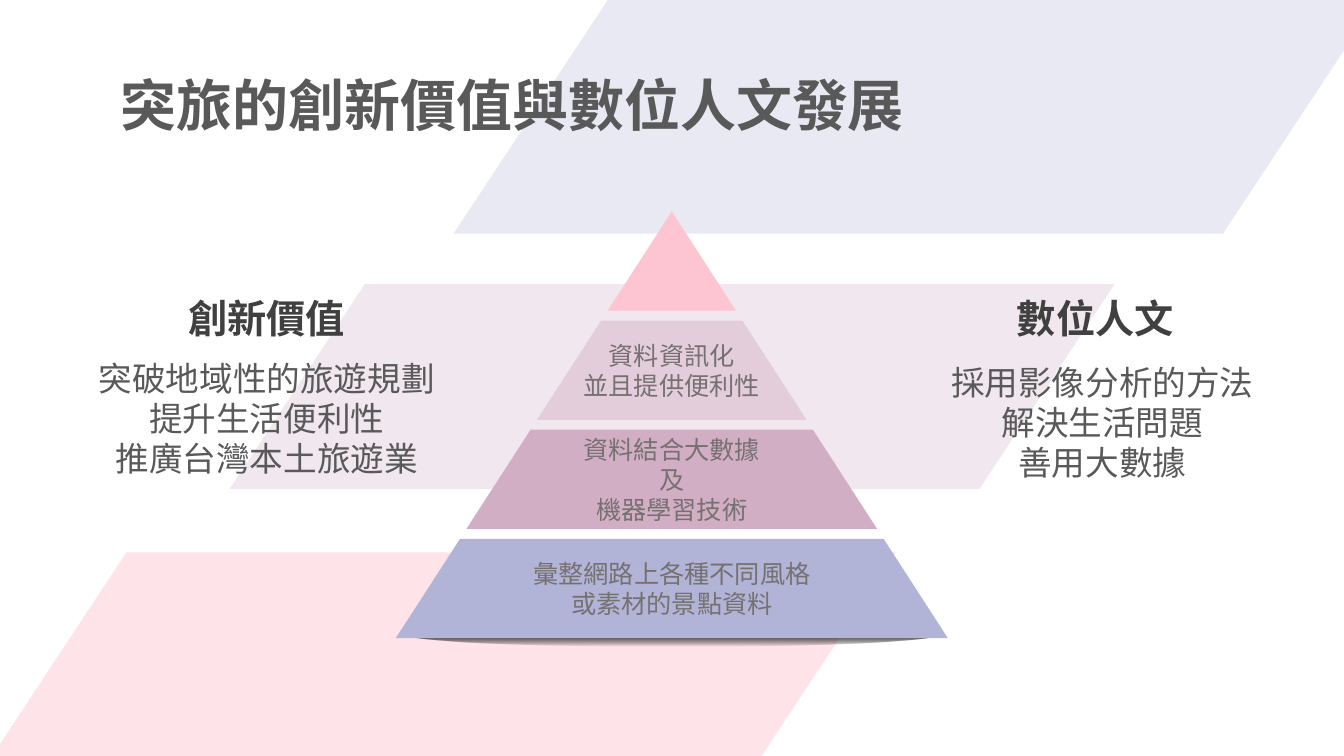
from dataclasses import dataclass

import lxml.etree
import pptx
import pptx.dml.color
import pptx.enum.shapes
import pptx.enum.text
import pptx.oxml
import pptx.oxml.ns
import pptx.shapes.autoshape
import pptx.slide
import pptx.text.text
import pptx.util

Cm = pptx.util.Cm
Pt = pptx.util.Pt
RGBColor = pptx.dml.color.RGBColor
MSO_SHAPE = pptx.enum.shapes.MSO_SHAPE
PP_ALIGN = pptx.enum.text.PP_ALIGN
MSO_ANCHOR = pptx.enum.text.MSO_ANCHOR
qn = pptx.oxml.ns.qn

LAVENDER = RGBColor(0xD0, 0xD1, 0xE7)
PERIWINKLE = RGBColor(0xB1, 0xB3, 0xD7)
MAUVE = RGBColor(0xD2, 0xAE, 0xC5)
PALE_MAUVE = RGBColor(0xE3, 0xCD, 0xDB)
PINK = RGBColor(0xFD, 0xC4, 0xD2)
BODY_GRAY = RGBColor(0x59, 0x59, 0x59)
HEADING_GRAY = RGBColor(0x40, 0x40, 0x40)
TIER_GRAY = RGBColor(0x76, 0x71, 0x71)

CJK_FONT = "Noto Sans CJK SC"
LINE_PITCH = 1.19

# Pyramid geometry in centimetres
APEX_X, APEX_Y = 16.93, 5.33
TIER_HEIGHT, TIER_PITCH = 2.5, 2.75
HALF_WIDTH_PER_HEIGHT = 0.647

SHADOW_GRADIENT = (
    f'<a:gradFill {pptx.oxml.ns.nsdecls("a")} rotWithShape="1"><a:gsLst>'
    '<a:gs pos="0"><a:srgbClr val="262626"/></a:gs>'
    '<a:gs pos="100000"><a:srgbClr val="000000"><a:alpha val="0"/></a:srgbClr></a:gs>'
    '</a:gsLst><a:path path="shape">'
    '<a:fillToRect l="50000" t="50000" r="50000" b="50000"/></a:path></a:gradFill>'
)


@dataclass(frozen=True)
class Box:
    left: float
    top: float
    width: float
    height: float

    def lengths(self) -> tuple[Cm, Cm, Cm, Cm]:
        return Cm(self.left), Cm(self.top), Cm(self.width), Cm(self.height)


@dataclass(frozen=True)
class Band:
    box: Box
    color: RGBColor


@dataclass(frozen=True)
class Tier:
    color: RGBColor
    text: str = ""


@dataclass(frozen=True)
class Column:
    heading: str
    heading_box: Box
    heading_font: str
    body: str
    body_box: Box


BANDS = [
    Band(Box(11.43, -2.29, 24.79, 8.18), LAVENDER),
    Band(Box(5.79, 7.16, 22.3, 5.16), PALE_MAUVE),
    Band(Box(-2.21, 13.92, 24.79, 8.18), PINK),
]
TIERS = [
    Tier(PINK),
    Tier(PALE_MAUVE, "資料資訊化\n並且提供便利性"),
    Tier(MAUVE, "資料結合大數據\n及\n機器學習技術"),
    Tier(PERIWINKLE, "彙整網路上各種不同風格\n或素材的景點資料"),
]
COLUMNS = [
    Column("創新價值", Box(3.76, 7.29, 5.92, 1.45), CJK_FONT,
           "突破地域性的旅遊規劃\n提升生活便利性\n推廣台灣本土旅遊業",
           Box(2.01, 8.79, 9.42, 5.13)),
    Column("數位人文", Box(25.35, 7.29, 4.5, 1.45), "Arial",
           "採用影像分析的方法\n解決生活問題\n善用大數據",
           Box(22.94, 8.89, 9.68, 4.88)),
]


def write_text(frame: pptx.text.text.TextFrame, text: str, size: float, color: RGBColor,
               font: str = CJK_FONT, bold: bool = False,
               align: PP_ALIGN = PP_ALIGN.CENTER,
               spacing: pptx.util.Length | float | None = None) -> None:
    """Fill the frame and format its runs for Latin and East Asian script."""
    frame.text = text
    for paragraph in frame.paragraphs:
        paragraph.alignment = align
        paragraph.line_spacing = spacing
        for run in paragraph.runs:
            run.font.size = Pt(size)
            run.font.bold = bold
            run.font.color.rgb = color
            run.font.name = font
            properties = run.font.color and run._r.get_or_add_rPr()
            lxml.etree.SubElement(properties, qn("a:ea")).set("typeface", font)


def paint(shape: pptx.shapes.autoshape.Shape, color: RGBColor) -> None:
    shape.shadow.inherit = False
    shape.line.fill.background()
    shape.fill.solid()
    shape.fill.fore_color.rgb = color


def add_band(slide: pptx.slide.Slide, band: Band) -> None:
    shape = slide.shapes.add_shape(MSO_SHAPE.PARALLELOGRAM, *band.box.lengths())
    shape.adjustments[0] = 0.66
    paint(shape, band.color)
    tint = shape.element.find(f".//{qn('a:solidFill')}/{qn('a:srgbClr')}")
    lxml.etree.SubElement(tint, qn("a:alpha")).set("val", "47000")


def add_pyramid_shadow(slide: pptx.slide.Slide) -> None:
    shape = slide.shapes.add_shape(MSO_SHAPE.OVAL, *Box(10.19, 15.67, 13.51, 0.61).lengths())
    paint(shape, HEADING_GRAY)
    solid = shape.element.find(f".//{qn('a:solidFill')}")
    solid.getparent().replace(solid, pptx.oxml.parse_xml(SHADOW_GRADIENT))


def add_tier(slide: pptx.slide.Slide, tier: Tier, level: int) -> None:
    """Draw the slice of the pyramid at this level, counted from the apex."""
    top = level * TIER_PITCH
    bottom = top + TIER_HEIGHT
    corners = [
        (Cm(APEX_X + side * depth * HALF_WIDTH_PER_HEIGHT), Cm(APEX_Y + depth))
        for side, depth in ((-1, top), (1, top), (1, bottom), (-1, bottom))
    ]
    builder = slide.shapes.build_freeform(*corners[0])
    builder.add_line_segments(corners[1:], close=True)
    shape = builder.convert_to_shape()
    paint(shape, tier.color)
    if tier.text:
        shape.text_frame.vertical_anchor = MSO_ANCHOR.MIDDLE
        write_text(shape.text_frame, tier.text, 18, TIER_GRAY, spacing=Pt(18 * LINE_PITCH))


def add_column(slide: pptx.slide.Slide, column: Column) -> None:
    body = slide.shapes.add_textbox(*column.body_box.lengths()).text_frame
    body.word_wrap = True
    body.margin_top = Cm(0.23)
    write_text(body, column.body, 24, BODY_GRAY, spacing=Pt(24 * LINE_PITCH))

    heading = slide.shapes.add_textbox(*column.heading_box.lengths()).text_frame
    heading.word_wrap = False
    heading.vertical_anchor = MSO_ANCHOR.MIDDLE
    write_text(heading, column.heading, 28, HEADING_GRAY, column.heading_font, bold=True)


def add_title(slide: pptx.slide.Slide) -> None:
    title = slide.shapes.title
    title.left, title.top, title.width, title.height = Box(2.79, 1.75, 30.48, 1.98).lengths()
    title.text_frame.vertical_anchor = MSO_ANCHOR.MIDDLE
    title.text_frame.auto_size = pptx.enum.text.MSO_AUTO_SIZE.NONE
    write_text(title.text_frame, "突旅的創新價值與數位人文發展", 40, BODY_GRAY,
               bold=True, align=PP_ALIGN.LEFT, spacing=0.9)
    # Bring the title in front of the bands
    slide.shapes.element.append(title.element)


def main() -> None:
    presentation = pptx.Presentation()
    presentation.slide_width, presentation.slide_height = Cm(33.87), Cm(19.05)
    slide = presentation.slides.add_slide(presentation.slide_layouts[5])
    for band in BANDS:
        add_band(slide, band)
    add_title(slide)
    add_pyramid_shadow(slide)
    for level, tier in reversed(list(enumerate(TIERS))):
        add_tier(slide, tier, level)
    for column in COLUMNS:
        add_column(slide, column)
    presentation.save("out.pptx")


if __name__ == "__main__":
    main()
